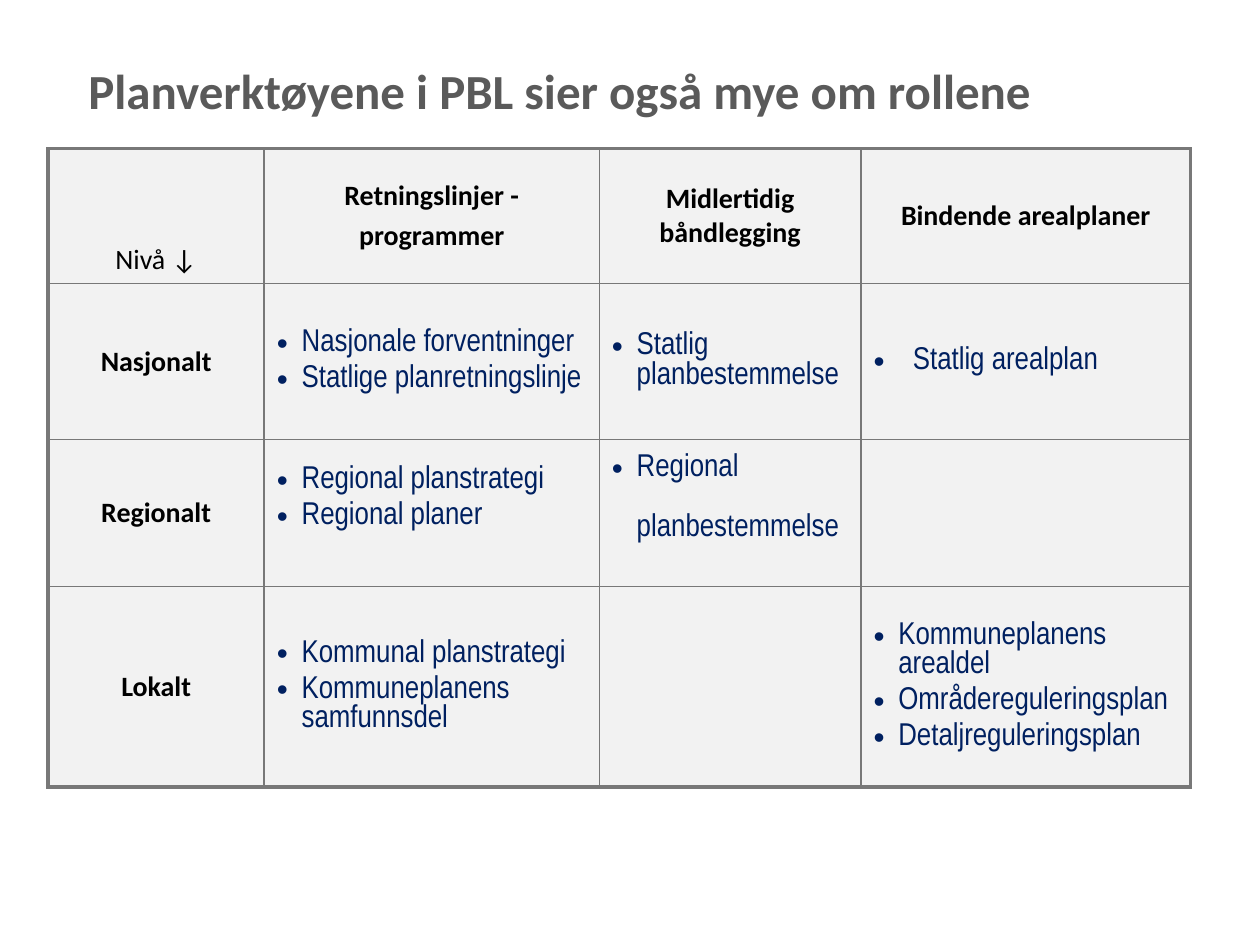
from dataclasses import dataclass

from lxml.etree import SubElement
from pptx import Presentation
from pptx.dml.color import RGBColor
from pptx.enum.text import MSO_ANCHOR, PP_ALIGN
from pptx.oxml import parse_xml
from pptx.oxml.ns import nsdecls, qn
from pptx.util import Pt


@dataclass(frozen=True)
class Theme:
    heading_font: str = "Calibri"
    list_font: str = "Arial Narrow"
    title_size: int = 28
    label_size: int = 16
    list_size: int = 18
    title_color: str = "5A5A5A"
    label_color: str = "000000"
    list_color: str = "002060"
    cell_fill: str = "F2F2F2"
    border_color: str = "787878"
    outer_border: float = 2.25
    inner_border: float = 1
    list_line: float = 17


THEME = Theme()
TITLE = "Planverktøyene i PBL sier også mye om rollene"
CORNER = "Nivå ↓"
HEADERS = [["Retningslinjer -", "programmer"], ["Midlertidig båndlegging"],
           ["Bindende arealplaner"]]
LEVELS = [
    ("Nasjonalt", [["Nasjonale forventninger", "Statlige planretningslinje"],
                   ["Statlig planbestemmelse"],
                   ["Statlig arealplan"]]),
    ("Regionalt", [["Regional planstrategi", "Regional planer"],
                   ["Regional", "planbestemmelse"],
                   []]),
    ("Lokalt", [["Kommunal planstrategi", "Kommuneplanens samfunnsdel"],
                [],
                ["Kommuneplanens arealdel", "Områdereguleringsplan",
                 "Detaljreguleringsplan"]]),
]
CONTINUATIONS = {"planbestemmelse"}  # carries on the bullet above it
RAISED_LEVEL = "Regionalt"           # its lists sit half a line above the middle
INDENTS = {"Statlig arealplan": 22.5}
DEFAULT_INDENT = 14.2

TITLE_BOX = (22.5, 31, 674.5, 61)
TABLE_ORIGIN = (27.5, 85)
COLUMN_WIDTHS = [123.5, 191.5, 149.5, 188.5]
ROW_HEIGHTS = [77, 89.25, 84, 114.5]


def add_run(paragraph, text, font_name, size, color, bold):
    run = paragraph.add_run()
    run.text = text
    run.font.name = font_name
    run.font.size = Pt(size)
    run.font.bold = bold
    run.font.color.rgb = RGBColor.from_string(color)


def paragraphs_for(frame, lines):
    """Yield one paragraph per line, reusing the frame's first paragraph."""
    for index, line in enumerate(lines):
        yield index, line, frame.add_paragraph() if index else frame.paragraphs[0]


def write_label(cell, lines, bold=True):
    for index, line, paragraph in paragraphs_for(cell.text_frame, lines):
        paragraph.alignment = PP_ALIGN.CENTER
        if index:
            paragraph.space_before = Pt(THEME.label_size * 0.2)
        add_run(paragraph, line, THEME.heading_font, THEME.label_size,
                THEME.label_color, bold)


def set_bullet(paragraph, indent, bulleted):
    properties = paragraph._p.get_or_add_pPr()
    properties.set("marL", str(Pt(indent)))
    properties.set("indent", str(-Pt(indent) if bulleted else 0))
    if bulleted:
        SubElement(properties, qn("a:buFont"), typeface="Arial")
        SubElement(properties, qn("a:buChar"), char="•")
    else:
        SubElement(properties, qn("a:buNone"))


def write_list(cell, items):
    for index, item, paragraph in paragraphs_for(cell.text_frame, items):
        continued = item in CONTINUATIONS
        set_bullet(paragraph, INDENTS.get(item, DEFAULT_INDENT), not continued)
        paragraph.alignment = PP_ALIGN.LEFT
        if index:
            paragraph.space_before = Pt(
                THEME.list_line if continued else THEME.list_size * 0.2)
        add_run(paragraph, item, THEME.list_font, THEME.list_size,
                THEME.list_color, False)


def style_cell(cell, row, column):
    cell.fill.solid()
    cell.fill.fore_color.rgb = RGBColor.from_string(THEME.cell_fill)
    cell.vertical_anchor = MSO_ANCHOR.MIDDLE
    outer_sides = {"L": column == 0, "R": column == len(COLUMN_WIDTHS) - 1,
                   "T": row == 0, "B": row == len(ROW_HEIGHTS) - 1}
    properties = cell._tc.get_or_add_tcPr()
    for position, (side, outer) in enumerate(outer_sides.items()):
        width = Pt(THEME.outer_border if outer else THEME.inner_border)
        properties.insert(position, parse_xml(
            f'<a:ln{side} {nsdecls("a")} w="{width}"><a:solidFill>'
            f'<a:srgbClr val="{THEME.border_color}"/></a:solidFill></a:ln{side}>'))


def add_title(slide):
    title = slide.shapes.title
    title.left, title.top, title.width, title.height = map(Pt, TITLE_BOX)
    frame = title.text_frame
    frame.word_wrap = True
    frame.vertical_anchor = MSO_ANCHOR.TOP
    frame.margin_left, frame.margin_right = Pt(28), Pt(11.5)
    paragraph = frame.paragraphs[0]
    paragraph.alignment = PP_ALIGN.LEFT
    add_run(paragraph, TITLE, THEME.heading_font, THEME.title_size,
            THEME.title_color, True)


def add_plan_table(slide):
    table = slide.shapes.add_table(
        len(ROW_HEIGHTS), len(COLUMN_WIDTHS), *map(Pt, TABLE_ORIGIN),
        Pt(sum(COLUMN_WIDTHS)), Pt(sum(ROW_HEIGHTS))).table
    table.first_row = table.horz_banding = False
    for column, width in zip(table.columns, COLUMN_WIDTHS):
        column.width = Pt(width)
    for row_index, height in enumerate(ROW_HEIGHTS):
        table.rows[row_index].height = Pt(height)
        for column_index in range(len(COLUMN_WIDTHS)):
            style_cell(table.cell(row_index, column_index), row_index, column_index)

    corner = table.cell(0, 0)
    corner.vertical_anchor = MSO_ANCHOR.BOTTOM
    write_label(corner, [CORNER], bold=False)
    for column_index, header in enumerate(HEADERS, 1):
        write_label(table.cell(0, column_index), header)
    for row_index, (level, plan_lists) in enumerate(LEVELS, 1):
        write_label(table.cell(row_index, 0), [level])
        for column_index, plans in enumerate(plan_lists, 1):
            cell = table.cell(row_index, column_index)
            write_list(cell, plans)
            if level == RAISED_LEVEL:
                cell.margin_bottom = Pt(3.6 + THEME.list_line)


def main():
    presentation = Presentation()
    presentation.slide_width, presentation.slide_height = Pt(720), Pt(540)
    slide = presentation.slides.add_slide(presentation.slide_layouts[5])
    add_title(slide)
    add_plan_table(slide)
    presentation.save("out.pptx")


if __name__ == "__main__":
    main()
